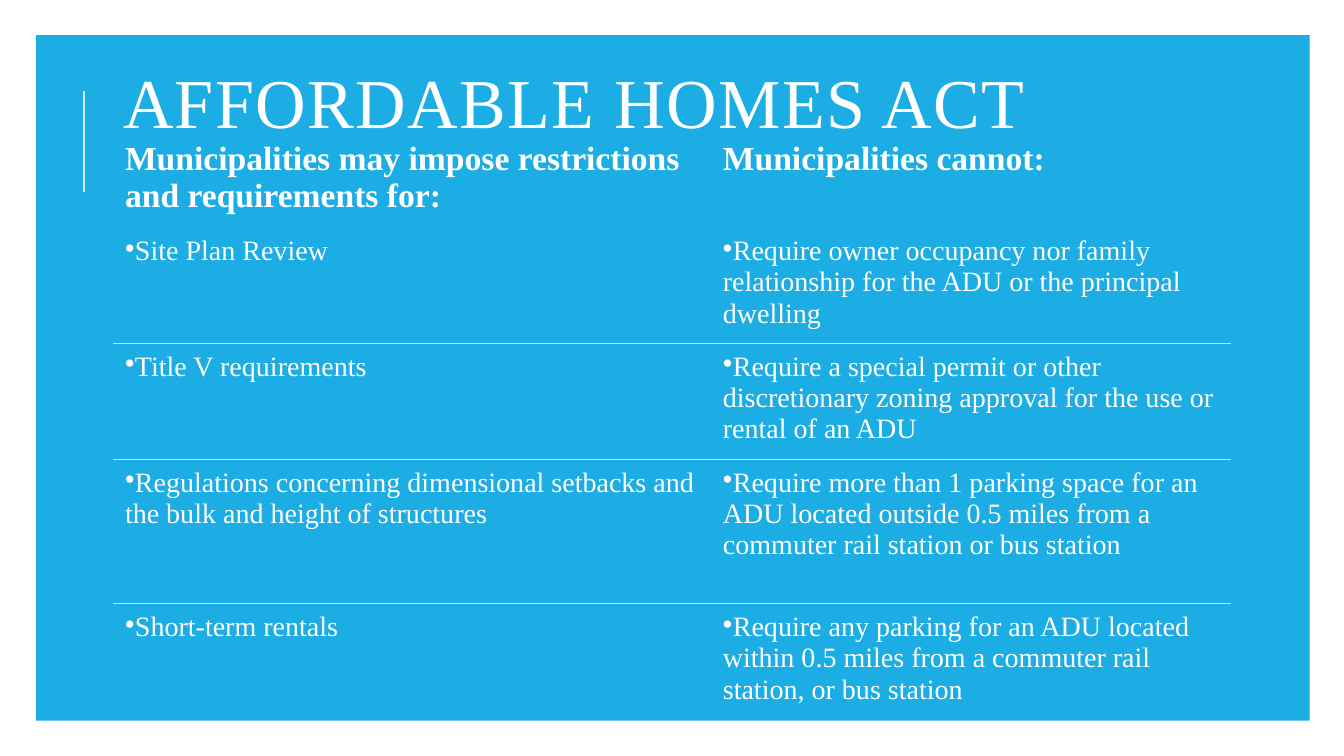
from typing import NamedTuple

from lxml import etree
from pptx import Presentation
from pptx import util as u
from pptx.dml.color import RGBColor
from pptx.enum import shapes, text
from pptx.oxml import ns

EMU_PER_PX = 9144  # 100 px to the inch
FONT = "Times New Roman"
WHITE, BLUE, PALE_BLUE, RULE_GREY = "FFFFFF", "1CADE4", "D2EFFA", "DCDCDC"
NO_STYLE = "{2D5ABB26-0587-4C30-8999-92F81FD0307C}"


class Box(NamedTuple):
    left: int
    top: int
    width: int
    height: int


class Row(NamedTuple):
    height: int
    allowed: str
    forbidden: str


PANEL = Box(36, 35, 1263, 680)
TITLE = Box(112, 64, 1130, 86)
TABLE = Box(112, 131, 1109, 583)
COLUMN_WIDTHS = (597, 512)
LEFT_INSETS = (12, 8)
ROWS = (
    Row(95, "Municipalities may impose restrictions and requirements for:",
        "Municipalities cannot:"),
    Row(115, "Site Plan Review",
        "Require owner occupancy nor family relationship for the ADU "
        "or the principal dwelling"),
    Row(115, "Title V requirements",
        "Require a special permit or other discretionary zoning approval "
        "for the use or rental of an ADU"),
    Row(143, "Regulations concerning dimensional setbacks and the bulk "
        "and height of structures",
        "Require more than 1 parking space for an ADU located outside "
        "0.5 miles from a commuter rail station or bus station"),
    Row(115, "Short-term rentals",
        "Require any parking for an ADU located within 0.5 miles from "
        "a commuter rail station, or bus station"),
)


def px(length: int) -> u.Emu:
    return u.Emu(length * EMU_PER_PX)


def colour(hex_value: str) -> RGBColor:
    return RGBColor.from_string(hex_value)


def format_runs(para, size: int, bold: bool = False) -> None:
    for span in para.runs:
        span.font.name = FONT
        span.font.size = u.Pt(size)
        span.font.bold = bold
        span.font.color.rgb = colour(WHITE)


def add_panel(page, box: Box):
    panel = page.shapes.add_shape(shapes.MSO_SHAPE.RECTANGLE, *map(px, box))
    panel.shadow.inherit = False
    panel.fill.solid()
    panel.fill.fore_color.rgb = colour(BLUE)
    panel.line.fill.background()
    return panel


def set_title(page, box: Box, wording: str) -> None:
    title = page.shapes.title
    title.left, title.top, title.width, title.height = map(px, box)
    frame = title.text_frame
    frame.text = wording
    frame.word_wrap = True
    frame.auto_size = text.MSO_AUTO_SIZE.NONE
    frame.vertical_anchor = text.MSO_ANCHOR.MIDDLE
    para = frame.paragraphs[0]
    para.alignment = text.PP_ALIGN.LEFT
    para.line_spacing = 0.8
    format_runs(para, 50)
    for span in para.runs:
        span.font._element.set("spc", "100")


def add_accent_line(page, x: int, top: int, bottom: int) -> None:
    line = page.shapes.add_connector(
        shapes.MSO_CONNECTOR.STRAIGHT, px(x), px(bottom), px(x), px(top))
    line.line.color.rgb = colour(PALE_BLUE)
    line.line.width = u.Pt(1.5)
    etree.SubElement(line._element.spPr, ns.qn("a:effectLst"))


def add_bullet(para) -> None:
    properties = para._p.get_or_add_pPr()
    properties.set("marL", "0")
    properties.set("indent", "0")
    etree.SubElement(properties, ns.qn("a:buChar")).set("char", "•")


def add_borders(cell, sides: list[str]) -> None:
    properties = cell._tc.get_or_add_tcPr()
    for index, side in enumerate(sides):
        border = etree.Element(ns.qn(f"a:{side}"), w=str(u.Pt(0.75)))
        fill = etree.SubElement(border, ns.qn("a:solidFill"))
        etree.SubElement(fill, ns.qn("a:srgbClr")).set("val", RULE_GREY)
        properties.insert(index, border)


def fill_cell(cell, wording: str, left_inset: int, is_header: bool) -> None:
    cell.margin_left, cell.margin_right = px(left_inset), px(16)
    cell.margin_top = cell.margin_bottom = px(8)
    cell.fill.background()
    cell.text_frame.text = wording
    para = cell.text_frame.paragraphs[0]
    format_runs(para, 24 if is_header else 20, is_header)
    if not is_header:
        add_bullet(para)


def add_rules_table(page, box: Box, rows: tuple[Row, ...]) -> None:
    frame = page.shapes.add_table(len(rows), len(COLUMN_WIDTHS), *map(px, box))
    table = frame.table
    table.horz_banding = False
    table._tbl.tblPr.find(ns.qn("a:tableStyleId")).text = NO_STYLE
    for column, width in zip(table.columns, COLUMN_WIDTHS):
        column.width = px(width)
    for index, row in enumerate(rows):
        table.rows[index].height = px(row.height)
        # Rules separate the body rows only
        sides = ["lnT"] if index > 1 else []
        if 0 < index < len(rows) - 1:
            sides.append("lnB")
        wordings = (row.allowed, row.forbidden)
        for column, (wording, inset) in enumerate(zip(wordings, LEFT_INSETS)):
            cell = table.cell(index, column)
            fill_cell(cell, wording, inset, is_header=index == 0)
            add_borders(cell, sides)


def main() -> None:
    deck = Presentation()
    deck.slide_width, deck.slide_height = px(1333), px(750)
    page = deck.slides.add_slide(deck.slide_layouts[5])

    # White margin around a blue panel, which lies behind the title
    page.background.fill.solid()
    page.background.fill.fore_color.rgb = colour(WHITE)
    panel = add_panel(page, PANEL)
    page.shapes.title._element.addprevious(panel._element)

    # Title with its accent line
    set_title(page, TITLE, "AFFORDABLE HOMES ACT")
    add_accent_line(page, 83, 90, 190)

    # What municipalities may and may not do
    add_rules_table(page, TABLE, ROWS)
    deck.save("out.pptx")


if __name__ == "__main__":
    main()
